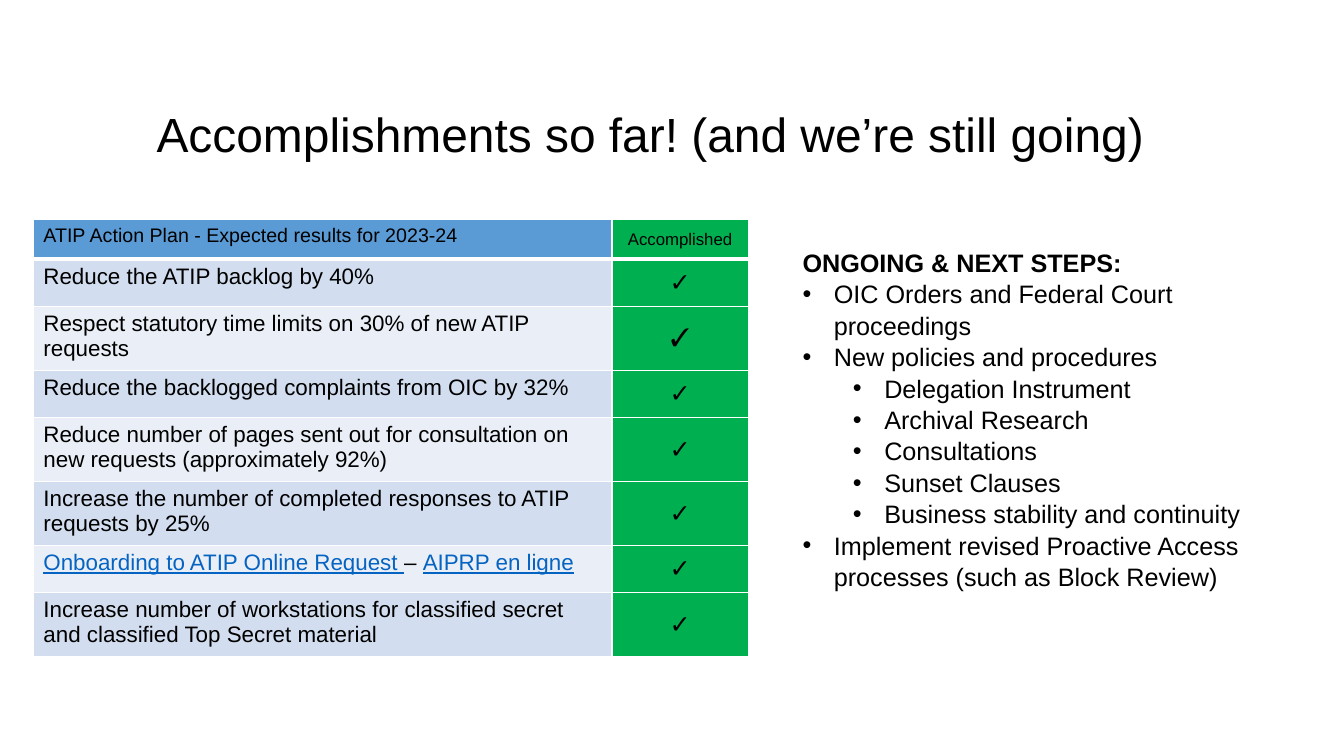
from lxml.etree import SubElement
from pptx import Presentation
from pptx.dml.color import RGBColor
from pptx.enum.text import MSO_ANCHOR, MSO_AUTO_SIZE, PP_ALIGN
from pptx.oxml.ns import qn
from pptx.util import Inches, Pt

WIDTH, HEIGHT = Inches(13.33), Inches(7.5)
COLOURS = {
    "ink": "000000", "line": "FFFFFF", "header": "5B9BD5", "done": "00B050",
    "odd": "D2DEEF", "even": "EAEFF7", "link": "0563C1",
}
TICK = "✓"
RESULTS = [
    "Reduce the ATIP backlog by 40%",
    "Respect statutory time limits on 30% of new ATIP requests",
    "Reduce the backlogged complaints from OIC by 32%",
    "Reduce number of pages sent out for consultation on new requests (approximately 92%)",
    "Increase the number of completed responses to ATIP requests by 25%",
    [("Onboarding to ATIP Online Request ", True), ("– ", False), ("AIPRP en ligne", True)],
    "Increase number of workstations for classified secret and classified Top Secret material",
]
TIMES_ROW = 2
STEPS = [
    (0, "OIC Orders and Federal Court proceedings"),
    (0, "New policies and procedures"),
    (1, "Delegation Instrument"),
    (1, "Archival Research"),
    (1, "Consultations"),
    (1, "Sunset Clauses"),
    (1, "Business stability and continuity"),
    (0, "Implement revised Proactive Access processes (such as Block Review)"),
]


def across(percent):
    return round(WIDTH * percent / 100)


def down(percent):
    return round(HEIGHT * percent / 100)


def rgb(name):
    return RGBColor.from_string(COLOURS[name])


def apply(target, values):
    for key, value in values.items():
        setattr(target, key, value)


def place(shape, left, top, width, height):
    apply(shape, {"left": across(left), "top": down(top),
                  "width": across(width), "height": down(height)})


def add_run(paragraph, text, size, colour="ink", **values):
    run = paragraph.add_run()
    run.text = text
    apply(run.font, {"name": "Arial", "size": Pt(size), "bold": False, **values})
    run.font.color.rgb = rgb(colour)


def set_bullet(paragraph, level=None):
    """Bullet with a hanging indent, or none when no level is given."""
    properties = paragraph._p.get_or_add_pPr()
    hang = across(2.33) if level is not None else 0
    margin = hang + across(3.75) * (level or 0)
    properties.set("marL", str(margin))
    properties.set("indent", str(-hang))
    if level is None:
        SubElement(properties, qn("a:buNone"))
    else:
        SubElement(properties, qn("a:buFont"), typeface="Arial")
        SubElement(properties, qn("a:buChar"), char="•")
        paragraph.level = level


def set_cell(cell, fill, bottom=1):
    """Cell borders first, since the fill must follow them."""
    properties = cell._tc.get_or_add_tcPr()
    for side, points in {"L": 1, "R": 1, "T": 1, "B": bottom}.items():
        border = SubElement(properties, qn(f"a:ln{side}"), w=str(Pt(points)))
        solid = SubElement(border, qn("a:solidFill"))
        SubElement(solid, qn("a:srgbClr"), val=COLOURS["line"])
    cell.fill.solid()
    cell.fill.fore_color.rgb = rgb(fill)


def add_status(cell, text, size, bottom=1, **values):
    set_cell(cell, "done", bottom)
    cell.vertical_anchor = MSO_ANCHOR.MIDDLE
    paragraph = cell.text_frame.paragraphs[0]
    paragraph.alignment = PP_ALIGN.CENTER
    add_run(paragraph, text, size, **values)


def add_results(slide):
    table = slide.shapes.add_table(
        len(RESULTS) + 1, 2, across(2.48), down(29.07), across(53.19), down(49.09)).table
    for column, share in zip(table.columns, (43.06, 10.13)):
        column.width = across(share)
    for number, row in enumerate(table.rows):
        row.height = down(6.27 if number else 5.2)

    # Header row
    set_cell(table.cell(0, 0), "header", bottom=3)
    add_run(table.cell(0, 0).text_frame.paragraphs[0],
            "ATIP Action Plan - Expected results for 2023-24", 14)
    add_status(table.cell(0, 1), "Accomplished", 12, bottom=3)

    # One expected result per row
    for number, result in enumerate(RESULTS, 1):
        cell = table.cell(number, 0)
        set_cell(cell, "odd" if number % 2 else "even")
        parts = [(result, False)] if isinstance(result, str) else result
        for text, linked in parts:
            add_run(cell.text_frame.paragraphs[0], text, 16,
                    "link" if linked else "ink", underline=linked)
        font = "Times New Roman" if number == TIMES_ROW else "Arial"
        add_status(table.cell(number, 1), TICK, 18, name=font)


def add_title(slide):
    title = slide.shapes.title
    place(title, 9, 9.73, 78.77, 15.73)
    apply(title.text_frame, {"vertical_anchor": MSO_ANCHOR.MIDDLE, "word_wrap": True,
                             "auto_size": MSO_AUTO_SIZE.NONE})
    heading = title.text_frame.paragraphs[0]
    heading.alignment = PP_ALIGN.CENTER
    add_run(heading, "Accomplishments so far! (and we’re still going)", 34.2)


def add_next_steps(slide):
    steps = slide.placeholders[1]
    place(steps, 58.96, 31.87, 38.03, 53.87)
    frame = steps.text_frame
    apply(frame, {"vertical_anchor": MSO_ANCHOR.TOP, "word_wrap": True,
                  "auto_size": MSO_AUTO_SIZE.SHAPE_TO_FIT_TEXT})
    heading = frame.paragraphs[0]
    set_bullet(heading)
    add_run(heading, "ONGOING & NEXT STEPS:", 18, bold=True)
    for level, text in STEPS:
        step = frame.add_paragraph()
        set_bullet(step, level)
        add_run(step, text, 18)
    for paragraph in frame.paragraphs:
        apply(paragraph, {"space_before": Pt(0), "line_spacing": 1.04})


def main():
    deck = Presentation()
    apply(deck, {"slide_width": WIDTH, "slide_height": HEIGHT})
    slide = deck.slides.add_slide(deck.slide_layouts[1])
    add_title(slide)
    add_results(slide)
    add_next_steps(slide)
    deck.save("out.pptx")


if __name__ == "__main__":
    main()
